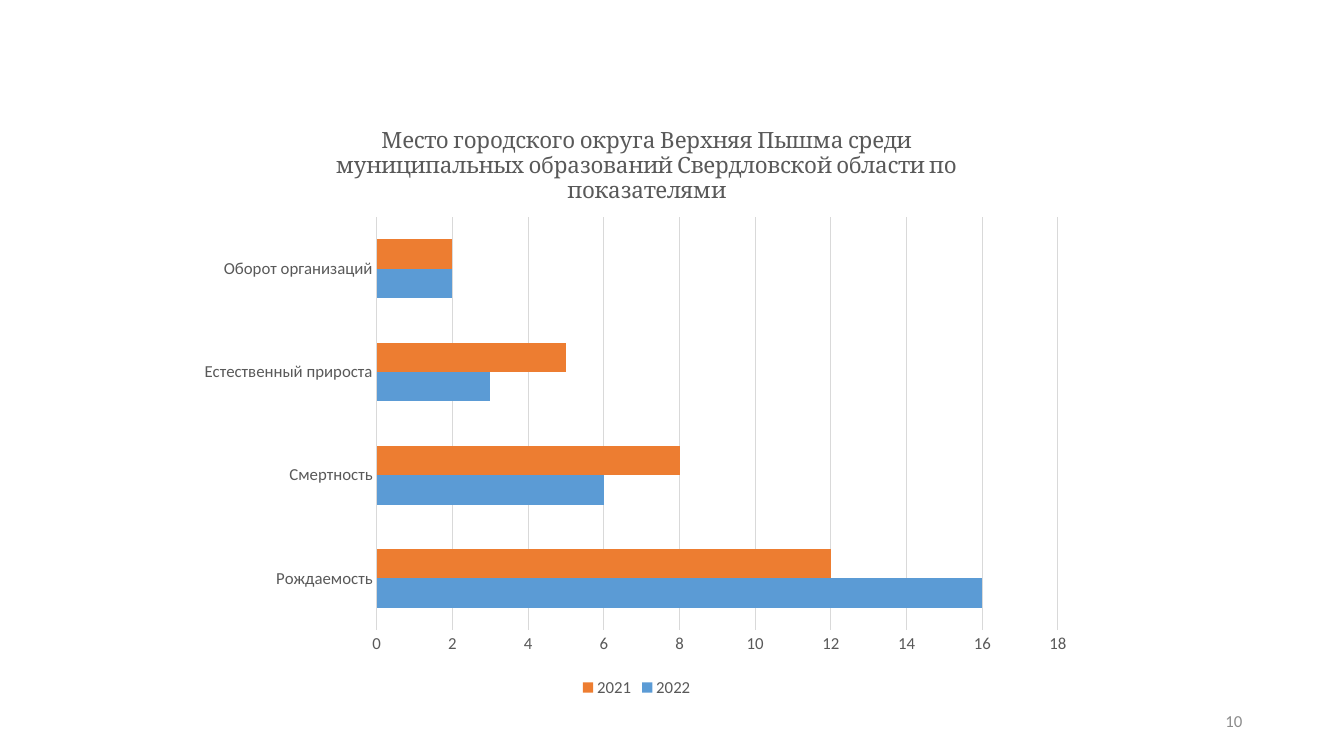
from pptx import Presentation
from pptx.chart.data import CategoryChartData
from pptx.dml.color import RGBColor
from pptx.enum.chart import XL_CHART_TYPE, XL_LEGEND_POSITION, XL_TICK_MARK
from pptx.enum.text import MSO_ANCHOR, PP_ALIGN
from pptx.oxml import parse_xml
from pptx.oxml.ns import nsdecls
from pptx.util import Inches, Pt

BAR_CLUSTERED = XL_CHART_TYPE.BAR_CLUSTERED
LEGEND_BOTTOM = XL_LEGEND_POSITION.BOTTOM
NO_TICKS = XL_TICK_MARK.NONE
MIDDLE = MSO_ANCHOR.MIDDLE
RIGHT = PP_ALIGN.RIGHT

THEME = {
    "body_font": "Calibri",
    "title_font": "Cambria",
    "body_size": Pt(12),
    "title_size": Pt(16),
    "text": RGBColor.from_string("595959"),
    "page_number": RGBColor.from_string("8C8C8C"),
    "grid": RGBColor.from_string("D9D9D9"),
    "2022": RGBColor.from_string("5B9BD5"),
    "2021": RGBColor.from_string("ED7D31"),
}

INDICATORS = ["Рождаемость", "Смертность", "Естественный прироста", "Оборот организаций"]
PLACES = {"2022": [16, 6, 3, 2], "2021": [12, 8, 5, 2]}
TITLE = ("Место городского округа Верхняя Пышма среди муниципальных "
         "образований Свердловской области по показателями")


def style_font(font, size, color, name):
    font.size = size
    font.color.rgb = color
    font.name = name
    font.bold = False


def manual_layout(target="", **fractions):
    """Build a chart layout from fractions of the chart area."""
    inner = f'<c:layoutTarget val="{target}"/>' if target else ""
    modes = "".join(f'<c:{key}Mode val="edge"/>' for key in "xy")
    values = "".join(f'<c:{key} val="{value}"/>' for key, value in fractions.items())
    return parse_xml(f'<c:layout {nsdecls("c")}><c:manualLayout>'
                     f'{inner}{modes}{values}</c:manualLayout></c:layout>')


prs = Presentation()
prs.slide_width, prs.slide_height = Inches(13.33), Inches(7.5)
slide = prs.slides.add_slide(prs.slide_layouts[6])

# Page number
page_number = slide.shapes.add_textbox(Inches(9.42), Inches(6.95), Inches(3), Inches(0.4))
page_frame = page_number.text_frame
page_frame.word_wrap = True
page_frame.vertical_anchor = MIDDLE
page_frame.text = "10"
page_paragraph = page_frame.paragraphs[0]
page_paragraph.alignment = RIGHT
style_font(page_paragraph.runs[0].font, THEME["body_size"], THEME["page_number"],
           THEME["body_font"])

# Ranking chart
ranking = CategoryChartData(number_format="General")
ranking.categories = INDICATORS
for year, places in PLACES.items():
    ranking.add_series(year, places)
chart = slide.shapes.add_chart(BAR_CLUSTERED, Inches(1.87), Inches(1.03),
                               Inches(8.89), Inches(5.93), ranking).chart
style_font(chart.font, THEME["body_size"], THEME["text"], THEME["body_font"])

chart.has_title = True
title_frame = chart.chart_title.text_frame
title_frame.text = TITLE
style_font(title_frame.paragraphs[0].runs[0].font, THEME["title_size"], THEME["text"],
           THEME["title_font"])
chart.chart_title.include_in_layout = False
title_xml = chart.chart_title._element
for old_layout in title_xml.xpath("c:layout"):
    title_xml.remove(old_layout)
title_xml.xpath("c:tx")[0].addnext(manual_layout(x=0.16, y=0.03))

plot = chart.plots[0]
plot.gap_width = 150
plot.overlap = 0
plot.vary_by_categories = False
for series in plot.series:
    series.format.fill.solid()
    series.format.fill.fore_color.rgb = THEME[series.name]
    series.invert_if_negative = False

plot_area = chart._chartSpace.chart.plotArea
for old_layout in plot_area.xpath("c:layout"):
    plot_area.remove(old_layout)
plot_area.insert(0, manual_layout("inner", x=0.21, y=0.19, w=0.76, h=0.69))

for axis in (chart.category_axis, chart.value_axis):
    axis.major_tick_mark = NO_TICKS
    axis.minor_tick_mark = NO_TICKS
    axis.format.line.fill.background()
    style_font(axis.tick_labels.font, THEME["body_size"], THEME["text"], THEME["body_font"])
places_axis = chart.value_axis
places_axis.minimum_scale, places_axis.maximum_scale, places_axis.major_unit = 0, 18, 2
places_axis.has_major_gridlines = True
places_axis.major_gridlines.format.line.color.rgb = THEME["grid"]
places_axis.major_gridlines.format.line.width = Pt(0.75)

chart.has_legend = True
chart.legend.position = LEGEND_BOTTOM
chart.legend.include_in_layout = False
style_font(chart.legend.font, THEME["body_size"], THEME["text"], THEME["body_font"])

prs.save("out.pptx")
